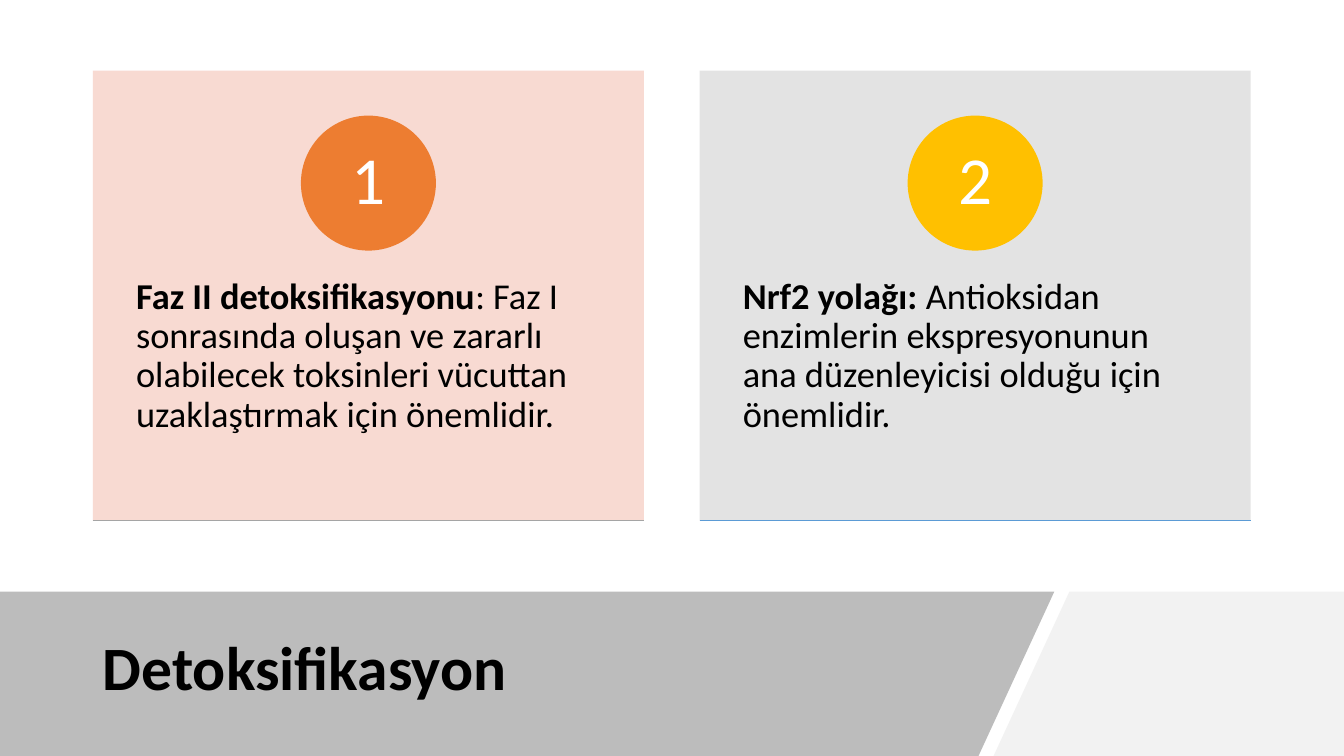
from lxml import etree
from pptx import Presentation
from pptx.dml.color import RGBColor
from pptx.enum.shapes import MSO_CONNECTOR, MSO_SHAPE
from pptx.enum.text import MSO_ANCHOR, MSO_AUTO_SIZE, PP_ALIGN
from pptx.oxml.ns import qn
from pptx.util import Cm, Pt

RECTANGLE, OVAL = MSO_SHAPE.RECTANGLE, MSO_SHAPE.OVAL
STRAIGHT = MSO_CONNECTOR.STRAIGHT
TOP, MIDDLE = MSO_ANCHOR.TOP, MSO_ANCHOR.MIDDLE
NO_AUTOFIT = MSO_AUTO_SIZE.NONE
LEFT, CENTER = PP_ALIGN.LEFT, PP_ALIGN.CENTER

SLIDE_WIDTH, SLIDE_HEIGHT = 33.87, 19.05
MARGIN = 2.34
CARD_TOP, CARD_WIDTH, CARD_HEIGHT, CARD_GAP = 1.78, 13.89, 11.34, 1.4
CARDS = [
    ("Faz II detoksifikasyonu",
     ": Faz I sonrasında oluşan ve zararlı olabilecek toksinleri vücuttan "
     "uzaklaştırmak için önemlidir.",
     "F8D7CE", "ED7D31", "A5A5A5"),
    ("Nrf2 yolağı: ",
     "Antioksidan enzimlerin ekspresyonunun ana düzenleyicisi olduğu için "
     "önemlidir.",
     "E1E1E1", "FFC000", "5B9BD5"),
]


def paint(color_format, hex_color):
    color_format.rgb = RGBColor.from_string(hex_color)


def fill_shape(shape, hex_color, opacity=100):
    shape.shadow.inherit = False
    shape.fill.solid()
    paint(shape.fill.fore_color, hex_color)
    shape.line.fill.background()
    if opacity < 100:
        color = shape.fill._xPr.find(qn("a:solidFill"))[0]
        etree.SubElement(color, qn("a:alpha")).set("val", str(opacity * 1000))


def format_frame(frame, size, hex_color, align, anchor, insets):
    frame.word_wrap = True
    frame.auto_size = NO_AUTOFIT
    frame.vertical_anchor = anchor
    side, edge = insets
    frame.margin_left = frame.margin_right = Cm(side)
    frame.margin_top = frame.margin_bottom = Cm(edge)
    paragraph = frame.paragraphs[0]
    paragraph.alignment = align
    paragraph.line_spacing = 0.9
    for run in paragraph.runs:
        run.font.name = "Calibri"
        run.font.size = Pt(size)
        paint(run.font.color, hex_color)


def add_card(slide, left, top, width, height, number, card):
    term, explanation, background, accent, rule_color = card
    panel = slide.shapes.add_shape(
        RECTANGLE, Cm(left), Cm(top), Cm(width), Cm(height))
    fill_shape(panel, background, 90)

    body = slide.shapes.add_textbox(
        Cm(left), Cm(top + 0.38 * height), Cm(width), Cm(0.6 * height))
    paragraph = body.text_frame.paragraphs[0]
    paragraph.text = term
    paragraph.add_run().text = explanation
    format_frame(body.text_frame, 26, "000000", LEFT, TOP, (1.09, 0.91))
    paragraph.runs[0].font.bold = True

    diameter = 0.3 * height
    badge = slide.shapes.add_shape(
        OVAL, Cm(left + (width - diameter) / 2), Cm(top + 0.1 * height),
        Cm(diameter), Cm(diameter))
    fill_shape(badge, accent)
    badge.text_frame.text = str(number)
    format_frame(badge.text_frame, 48, "FFFFFF", CENTER, MIDDLE, (0.25, 0.03))

    bottom = Cm(top + height)
    rule = slide.shapes.add_connector(
        STRAIGHT, Cm(left), bottom, Cm(left + width), bottom)
    rule.line.width = Pt(1)
    paint(rule.line.color, rule_color)
    etree.SubElement(rule._element.spPr, qn("a:effectLst"))


def add_band(slide, corners, hex_color, opacity=100):
    start, *rest = [(Cm(x), Cm(y)) for x, y in corners]
    outline = slide.shapes.build_freeform(*start)
    outline.add_line_segments(rest)
    fill_shape(outline.convert_to_shape(), hex_color, opacity)


def add_footer(slide, left, top, width, height, heading):
    right, bottom = left + width, top + height
    add_band(slide, [(left + 26.95, top), (right, top),
                     (right, bottom), (left + 25.04, bottom)], "F2F2F2")
    add_band(slide, [(left, top), (left + 26.57, top),
                     (left + 24.66, bottom), (left, bottom)], "595959", 40)

    title = slide.shapes.title
    title.left, title.top = Cm(left + MARGIN), Cm(top + 0.46)
    title.width, title.height = Cm(22.43), Cm(3.05)
    title.text_frame.text = heading
    format_frame(title.text_frame, 44, "000000", LEFT, MIDDLE, (0.25, 0.13))
    title.text_frame.paragraphs[0].runs[0].font.bold = True
    slide.shapes._spTree.append(title._element)


def main():
    deck = Presentation()
    deck.slide_width, deck.slide_height = Cm(SLIDE_WIDTH), Cm(SLIDE_HEIGHT)
    slide = deck.slides.add_slide(deck.slide_layouts.get_by_name("Title Only"))
    footer_top = 14.91
    add_footer(slide, 0, footer_top, SLIDE_WIDTH,
               SLIDE_HEIGHT - footer_top, "Detoksifikasyon")
    for index, card in enumerate(CARDS):
        add_card(slide, MARGIN + index * (CARD_WIDTH + CARD_GAP), CARD_TOP,
                 CARD_WIDTH, CARD_HEIGHT, index + 1, card)
    deck.save("out.pptx")


if __name__ == "__main__":
    main()
